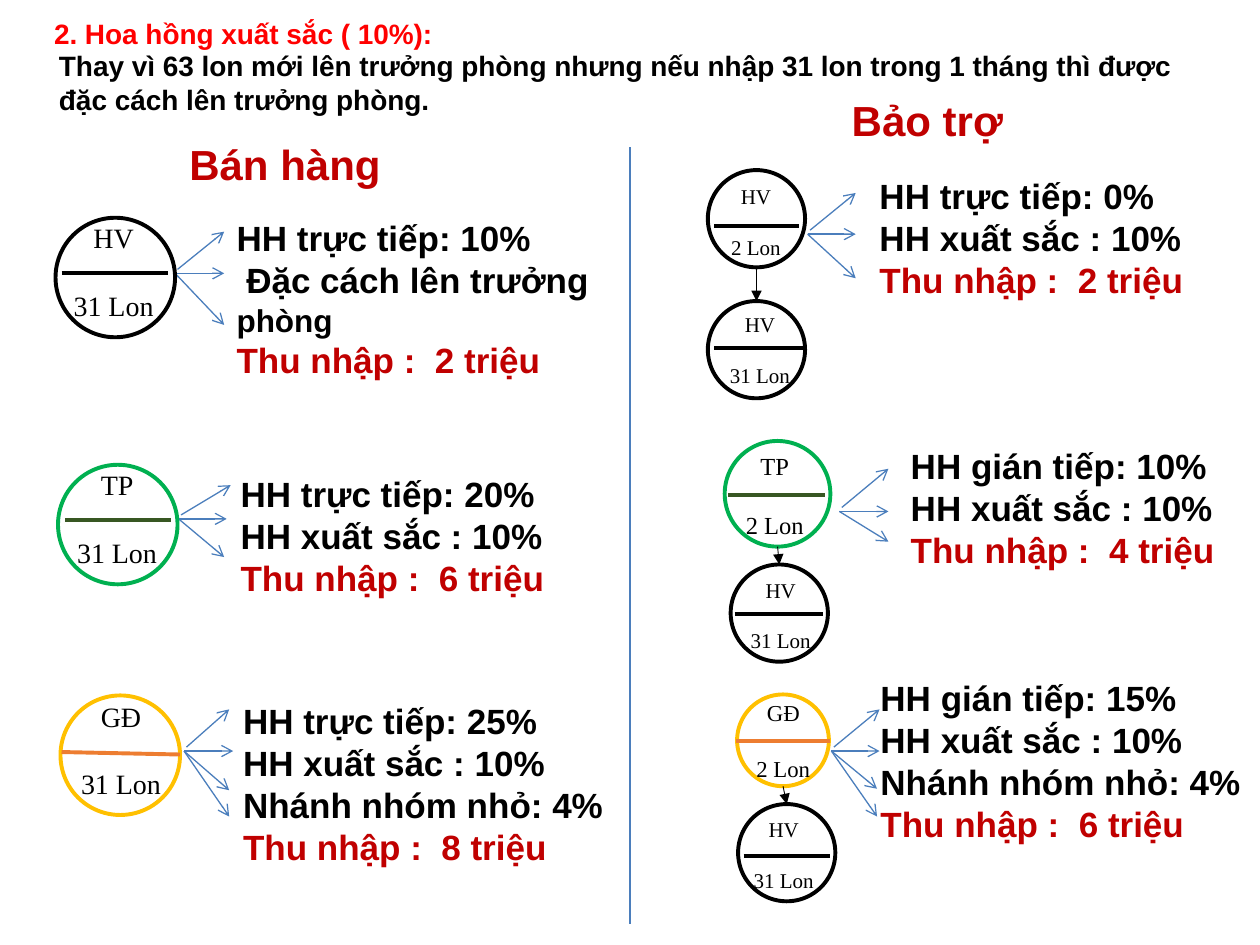
from lxml.etree import SubElement
from pptx import Presentation
from pptx.dml.color import RGBColor
from pptx.enum.shapes import MSO_CONNECTOR, MSO_SHAPE
from pptx.enum.text import PP_ALIGN
from pptx.oxml.ns import qn
from pptx.util import Cm, Pt

BLACK = RGBColor(0x00, 0x00, 0x00)
RED = RGBColor(0xFF, 0x00, 0x00)
CRIMSON = RGBColor(0xC0, 0x00, 0x00)
BLUE = RGBColor(0x4B, 0x7E, 0xBC)
GREEN = RGBColor(0x00, 0xB0, 0x50)
MOSS = RGBColor(0x38, 0x57, 0x23)
GOLD = RGBColor(0xFF, 0xC0, 0x00)
ORANGE = RGBColor(0xED, 0x7D, 0x31)

deck = Presentation()
deck.slide_width, deck.slide_height = Cm(25.4), Cm(19.05)
slide = deck.slides.add_slide(deck.slide_layouts[6])


def write(box, paras, font="Arial", bold=True, align=PP_ALIGN.LEFT, gap=0):
    """Fill a text box; each paragraph is a list of (text, size, colour) runs."""
    frame = slide.shapes.add_textbox(*map(Cm, box)).text_frame
    frame.word_wrap = True
    for i, runs in enumerate(paras):
        para = frame.add_paragraph() if i else frame.paragraphs[0]
        para.alignment = align
        if i and gap:
            para.space_before = Pt(gap)
        for text, size, color in runs:
            run = para.add_run()
            run.text = text
            run.font.name = font
            run.font.size = Pt(size)
            run.font.bold = bold
            run.font.color.rgb = color


def draw(start, end, color, width, head=None):
    line = slide.shapes.add_connector(
        MSO_CONNECTOR.STRAIGHT, *map(Cm, (*start, *end)))
    line.line.color.rgb = color
    line.line.width = Pt(width)
    if head:
        SubElement(line.line._get_or_add_ln(), qn("a:tailEnd"), type=head)
    SubElement(line._element.spPr, qn("a:effectLst"))


# Headings and divider
write((0.84, 0.2, 9.73, 0.94), [[("2. Hoa hồng xuất sắc ( 10%):", 16, RED)]])
write((0.94, 0.86, 23.39, 1.63), [[(
    "Thay vì 63 lon mới lên trưởng phòng nhưng nếu nhập 31 lon trong 1 tháng "
    "thì được đặc cách lên trưởng phòng.", 16, BLACK)]])
for left, top, title in [(2.34, 2.67, "Bán hàng"), (15.29, 1.78, "Bảo trợ")]:
    write((left, top, 6.81, 1.27), [[(title, 24, CRIMSON)]],
          align=PP_ALIGN.CENTER)
draw((12.7, 2.97), (12.7, 18.62), BLUE, 0.75)

# Commission lists: left, top, width, lines, income
BONUS = "HH xuất sắc : 10%"
BRANCH = "Nhánh nhóm nhỏ: 4%"
lists = [
    (4.52, 4.24, 8.41, ["HH trực tiếp: 10%", " Đặc cách lên trưởng "], 2),
    (4.6, 9.4, 6.81, ["HH trực tiếp: 20%", BONUS], 6),
    (4.65, 13.97, 8.03, ["HH trực tiếp: 25%", BONUS, BRANCH], 8),
    (17.48, 3.4, 6.81, ["HH trực tiếp: 0%", BONUS], 2),
    (18.11, 8.84, 6.81, ["HH gián tiếp: 10%", BONUS], 4),
    (17.5, 13.51, 8.26, ["HH gián tiếp: 15%", BONUS, BRANCH], 6),
]
for left, top, width, lines, income in lists:
    paras = [[(text, 20, BLACK)] for text in lines]
    if lines[-1].endswith("trưởng "):
        paras[-1].append(("phòng", 18, BLACK))
    paras.append([(f"Thu nhập :  {income} triệu", 20, CRIMSON)])
    write((left, top, width, 0.98 * len(paras)), paras)

# Arrow fans: origin, then tips; the top arrow starts slightly off the origin
fans = [
    (3.53, 5.51, [(4.52, 4.67), (4.52, 5.51), (4.52, 6.55)]),
    (3.6, 10.46, [(4.65, 9.78), (4.57, 10.46), (4.52, 11.23)]),
    (3.71, 15.14, [(4.62, 14.3), (4.7, 15.14), (4.62, 15.93), (4.62, 16.46)]),
    (16.28, 4.72, [(17.25, 3.89), (17.25, 4.72), (17.25, 5.61)]),
    (16.92, 10.31, [(17.91, 9.45), (17.91, 10.31), (17.91, 10.92)]),
    (16.76, 15.14, [(17.73, 14.3), (17.73, 15.14), (17.68, 15.9),
                    (17.68, 16.46)]),
]
for x, y, tips in fans:
    for i, tip in enumerate(tips):
        start = (x, y) if i else (x + 0.05, y - 0.08)
        draw(start, tip, BLUE, 0.75, "arrow")

# Badges: circle left, top, size, ring; bar colour, start, end;
# text middle, top, rank, amount, size
badges = [
    (1.12, 4.39, 2.41, BLACK, BLACK, (1.24, 5.51), (3.38, 5.51),
     2.29, 4.32, "HV", "31 Lon", 16),
    (1.17, 9.37, 2.41, GREEN, MOSS, (1.32, 10.49), (3.45, 10.49),
     2.36, 9.3, "TP", "31 Lon", 16),
    (1.22, 14.02, 2.41, GOLD, ORANGE, (1.24, 15.16), (3.63, 15.21),
     2.44, 13.97, "GĐ", "31 Lon", 16),
    (14.27, 3.43, 1.96, BLACK, BLACK, (14.4, 4.55), (16.1, 4.55),
     15.24, 3.58, "HV", "2 Lon", 12),
    (14.27, 6.07, 1.96, BLACK, BLACK, (14.4, 7.01), (16.18, 7.01),
     15.32, 6.15, "HV", "31 Lon", 12),
    (14.61, 8.89, 2.13, GREEN, MOSS, (14.68, 9.98), (16.64, 9.98),
     15.62, 8.97, "TP", "2 Lon", 14),
    (14.73, 11.38, 1.96, BLACK, BLACK, (14.81, 12.37), (16.59, 12.37),
     15.74, 11.51, "HV", "31 Lon", 12),
    (14.86, 14, 1.85, GOLD, ORANGE, (14.83, 14.94), (16.74, 14.94),
     15.79, 13.97, "GĐ", "2 Lon", 13),
    (14.88, 16.21, 1.96, BLACK, BLACK, (14.99, 17.25), (16.74, 17.25),
     15.8, 16.33, "HV", "31 Lon", 12),
]
for (left, top, side, ring, color, start, end,
     mid, head, rank, amount, size) in badges:
    disc = slide.shapes.add_shape(
        MSO_SHAPE.OVAL, Cm(left), Cm(top), Cm(side), Cm(side))
    disc.shadow.inherit = False
    disc.fill.background()
    disc.line.color.rgb = ring
    disc.line.width = Pt(2.25)
    write((mid - 1.2, head, 2.4, 0.14 * size),
          [[(rank, size, BLACK)], [(amount, size, BLACK)]],
          "Times New Roman", False, PP_ALIGN.CENTER, 1.22 * size)
    draw(start, end, color, 2.25)

# Each sponsor on the right points down to the next member
for upper, lower in zip(badges[3::2], badges[4::2]):
    draw((upper[0] + upper[2] / 2, upper[1] + upper[2]),
         (lower[0] + lower[2] / 2, lower[1]), BLACK, 0.5, "triangle")

deck.save("out.pptx")
